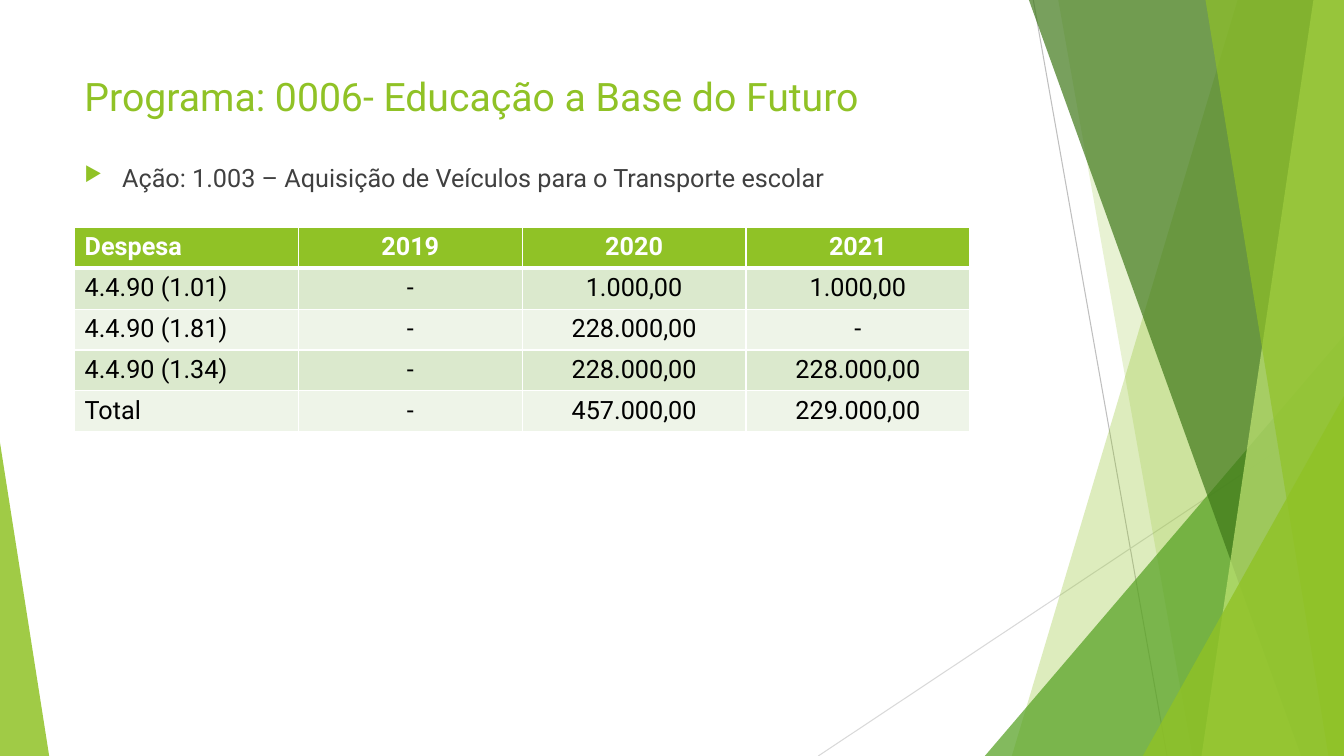
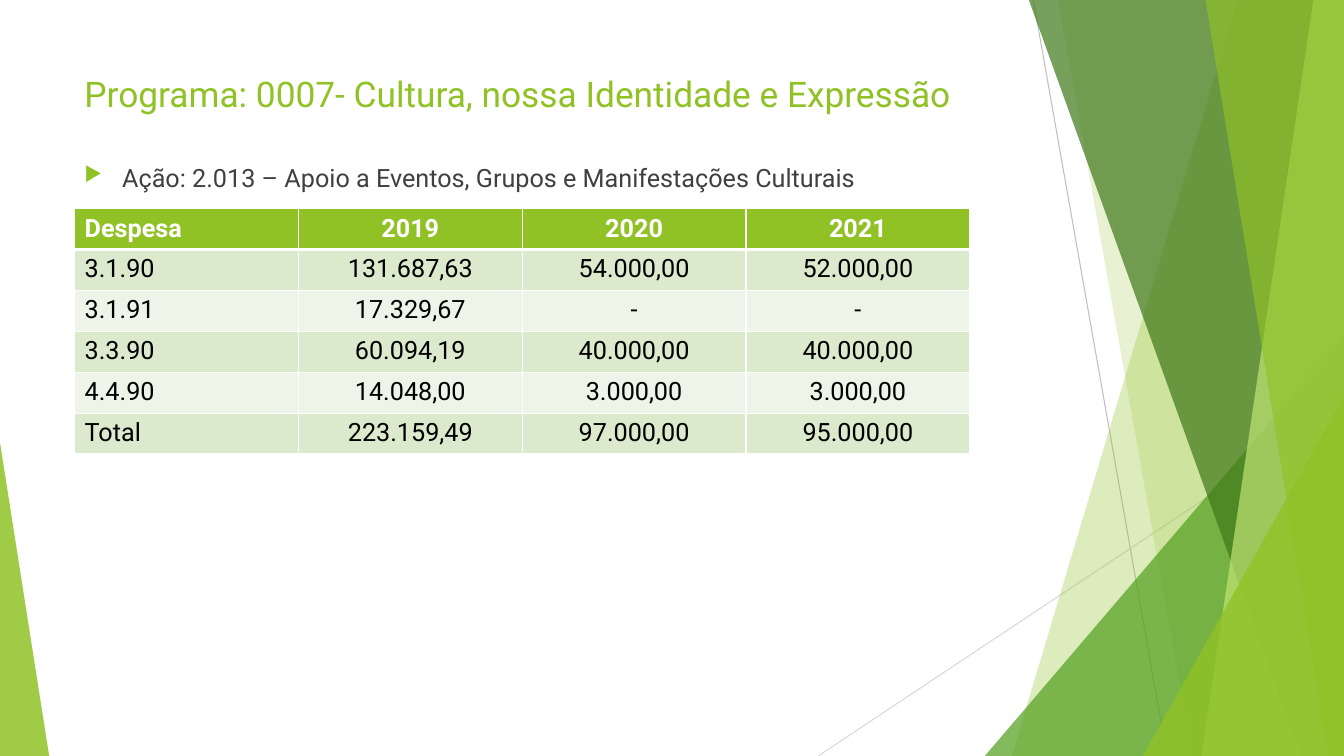
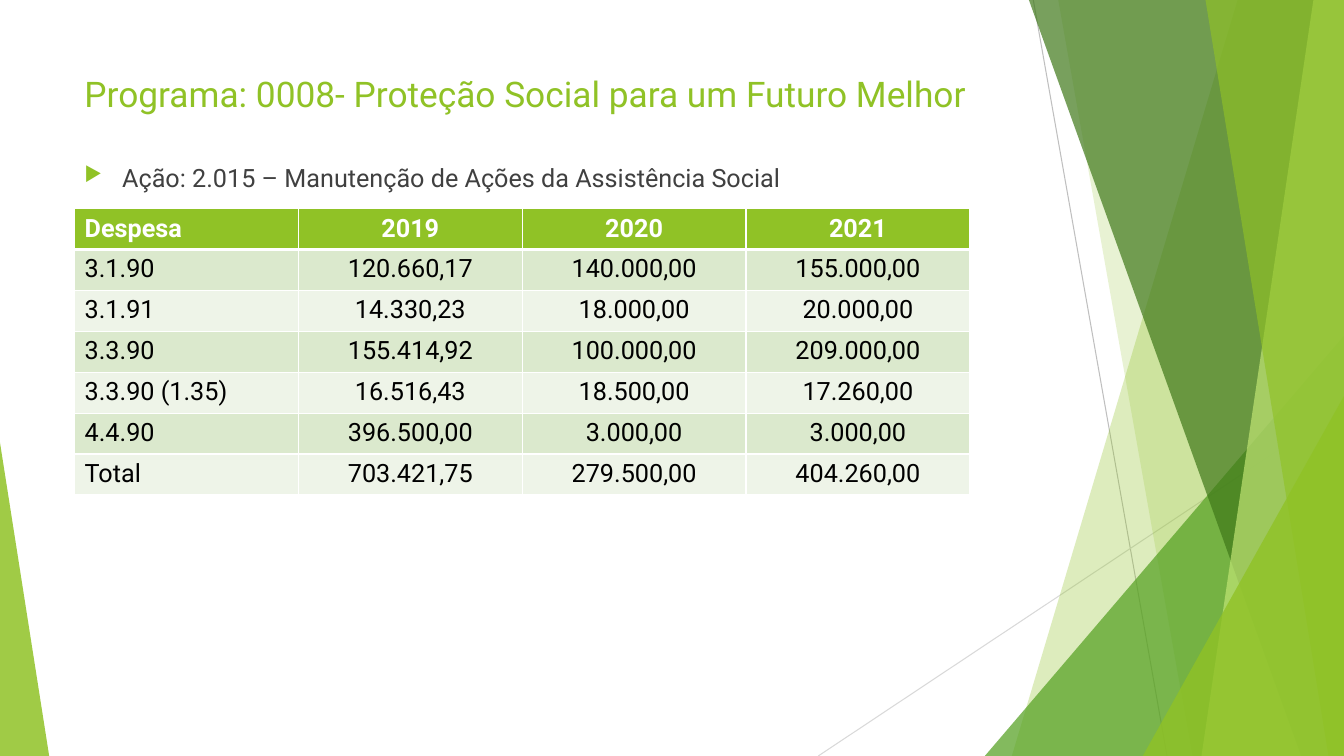
import lxml.etree
import pptx
import pptx.dml.color
import pptx.enum.shapes
import pptx.enum.text
import pptx.oxml.ns
import pptx.util

Cm, Pt = pptx.util.Cm, pptx.util.Pt
qn = pptx.oxml.ns.qn
SubElement = lxml.etree.SubElement
MSO_SHAPE = pptx.enum.shapes.MSO_SHAPE
ALIGN = pptx.enum.text.PP_ALIGN

FONT = "Roboto"
LIME, WHITE, BLACK, GRAY = "90C226", "FFFFFF", "000000", "404040"
ROW_FILLS = ["EEF4E8", "DBE9CD"]
WIDTH, HEIGHT = 33.87, 19.05
LEFT, TEXT_WIDTH = 1.88, 23.88
COLUMN_WIDTH, ROW_HEIGHT = 5.64, 1.03

# Thin lines: start x, start y, end x, end y, colour
LINES = [
    (26.04, 0, 29.41, HEIGHT, "BFBFBF"),
    (WIDTH, 10.24, 20.62, HEIGHT, "D9D9D9"),
]
# Bands reach the right edge: ("band", top x, bottom x, colour, opacity)
# Corners stand on the bottom edge: (side, width, top, colour, opacity)
PANELS = [
    ("band", 31.19, 25.5, LIME, 30),
    ("band", 26.67, 30.05, LIME, 20),
    ("right", 9.05, 8.46, "54A021", 72),
    ("band", 25.93, 32.79, "3F7819", 70),
    ("band", 33.1, 30.28, "C0E474", 70),
    ("band", 30.38, 33.48, LIME, 65),
    ("right", 5.07, 9.98, LIME, 80),
    ("left", 1.24, 11.15, LIME, 85),
]
HEADER = ("Despesa", "2019", "2020", "2021")

# Title, title size, action, table top, table rows
PROGRAMS = [
    ("Programa: 0006- Educação a Base do Futuro", 28,
     "Ação: 1.003 – Aquisição de Veículos para o Transporte escolar", 5.73, [
         ("4.4.90 (1.01)", "-", "1.000,00", "1.000,00"),
         ("4.4.90 (1.81)", "-", "228.000,00", "-"),
         ("4.4.90 (1.34)", "-", "228.000,00", "228.000,00"),
         ("Total", "-", "457.000,00", "229.000,00"),
     ]),
    ("Programa: 0007- Cultura, nossa Identidade e Expressão", 25.2,
     "Ação: 2.013 – Apoio a Eventos, Grupos e Manifestações Culturais", 5.26, [
         ("3.1.90", "131.687,63", "54.000,00", "52.000,00"),
         ("3.1.91", "17.329,67", "-", "-"),
         ("3.3.90", "60.094,19", "40.000,00", "40.000,00"),
         ("4.4.90", "14.048,00", "3.000,00", "3.000,00"),
         ("Total", "223.159,49", "97.000,00", "95.000,00"),
     ]),
    ("Programa: 0008- Proteção Social para um Futuro Melhor", 25.2,
     "Ação: 2.015 – Manutenção de Ações da Assistência Social", 5.26, [
         ("3.1.90", "120.660,17", "140.000,00", "155.000,00"),
         ("3.1.91", "14.330,23", "18.000,00", "20.000,00"),
         ("3.3.90", "155.414,92", "100.000,00", "209.000,00"),
         ("3.3.90 (1.35)", "16.516,43", "18.500,00", "17.260,00"),
         ("4.4.90", "396.500,00", "3.000,00", "3.000,00"),
         ("Total", "703.421,75", "279.500,00", "404.260,00"),
     ]),
]


def rgb(code):
    return pptx.dml.color.RGBColor.from_string(code)


def add_span(para, text, size, color, bold=False):
    span = para.add_run()
    span.text = text
    span.font.name = FONT
    span.font.size = Pt(size)
    span.font.bold = bold
    span.font.color.rgb = rgb(color)


deck = pptx.Presentation()
deck.slide_width, deck.slide_height = Cm(WIDTH), Cm(HEIGHT)

for title, title_size, action, table_top, expenses in PROGRAMS:
    page = deck.slides.add_slide(deck.slide_layouts[6])
    shapes = page.shapes

    # Background decoration
    for x1, y1, x2, y2, color in LINES:
        line = shapes.add_connector(pptx.enum.shapes.MSO_CONNECTOR.STRAIGHT,
                                    Cm(x1), Cm(y1), Cm(x2), Cm(y2))
        line.line.color.rgb = rgb(color)
        line.line.width = Pt(0.75)
        SubElement(line.element.spPr, qn("a:effectLst"))

    for kind, first, second, color, opacity in PANELS:
        if kind == "band":
            outline = shapes.build_freeform(Cm(first), 0)
            outline.add_line_segments([(Cm(WIDTH), 0), (Cm(WIDTH), Cm(HEIGHT)),
                                       (Cm(second), Cm(HEIGHT))])
            panel = outline.convert_to_shape()
        else:
            left = WIDTH - first if kind == "right" else 0
            panel = shapes.add_shape(MSO_SHAPE.ISOSCELES_TRIANGLE, Cm(left), Cm(second),
                                     Cm(first), Cm(HEIGHT - second))
            panel.adjustments[0] = 1 if kind == "right" else 0
        panel.shadow.inherit = False
        panel.line.fill.background()
        panel.fill.solid()
        panel.fill.fore_color.rgb = rgb(color)
        tint = panel.element.spPr.find(qn("a:solidFill")).find(qn("a:srgbClr"))
        SubElement(tint, qn("a:alpha"), val=str(opacity * 1000))

    # Title and action
    box = shapes.add_textbox(Cm(LEFT), Cm(1.7), Cm(TEXT_WIDTH), Cm(1.88))
    box.text_frame.word_wrap = True
    add_span(box.text_frame.paragraphs[0], title, title_size, LIME)

    box = shapes.add_textbox(Cm(LEFT), Cm(3.96), Cm(TEXT_WIDTH), Cm(12.8))
    box.text_frame.word_wrap = True
    para = box.text_frame.paragraphs[0]
    bullet = para._p.get_or_add_pPr()
    bullet.set("marL", str(Cm(0.95)))
    bullet.set("indent", str(-Cm(0.95)))
    SubElement(SubElement(bullet, qn("a:buClr")), qn("a:srgbClr"), val=LIME)
    SubElement(bullet, qn("a:buSzPct"), val="80000")
    SubElement(bullet, qn("a:buChar"), char="▶")
    add_span(para, action, 18, GRAY)

    # Expense table
    rows = [HEADER] + expenses
    table = shapes.add_table(len(rows), len(HEADER), Cm(LEFT), Cm(table_top),
                             Cm(COLUMN_WIDTH * len(HEADER)),
                             Cm(ROW_HEIGHT * len(rows))).table
    for column in table.columns:
        column.width = Cm(COLUMN_WIDTH)
    for r, values in enumerate(rows):
        table.rows[r].height = Cm(ROW_HEIGHT)
        is_header = r == 0
        for c, value in enumerate(values):
            cell = table.cell(r, c)
            borders = {"lnL": 1, "lnR": 1, "lnT": 3 if r == 1 else 1,
                       "lnB": 3 if is_header else 1}
            for side, weight in borders.items():
                border = SubElement(cell._tc.get_or_add_tcPr(), qn("a:" + side),
                                    w=str(Pt(weight)))
                SubElement(SubElement(border, qn("a:solidFill")), qn("a:srgbClr"), val=WHITE)
            cell.fill.solid()
            cell.fill.fore_color.rgb = rgb(LIME if is_header else ROW_FILLS[r % 2])
            para = cell.text_frame.paragraphs[0]
            para.alignment = ALIGN.CENTER if c else ALIGN.LEFT
            add_span(para, value, 18, WHITE if is_header else BLACK, is_header)

deck.save("out.pptx")
